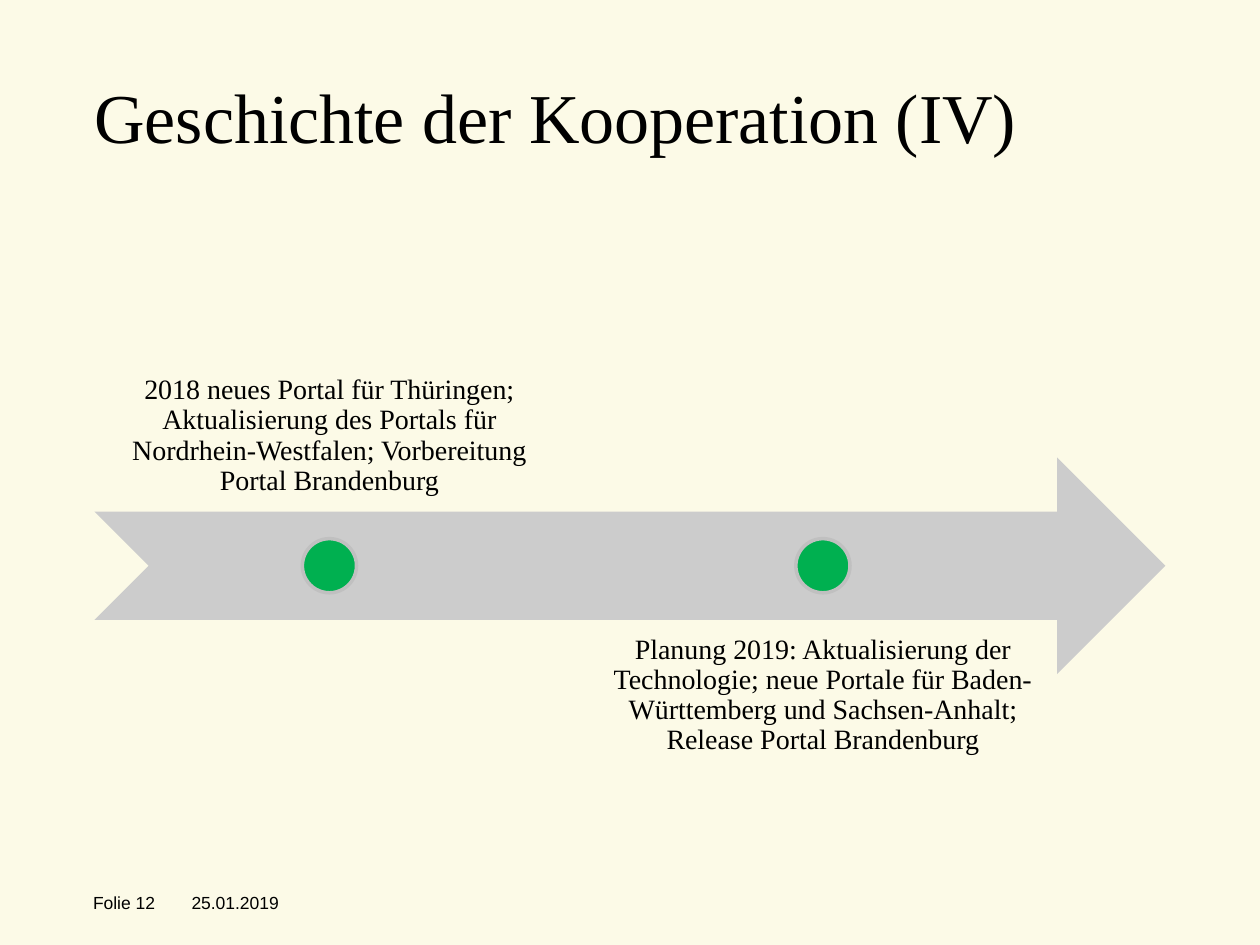
from dataclasses import dataclass
from pptx import Presentation
from pptx.dml.color import RGBColor
from pptx.enum.shapes import MSO_SHAPE as Shape
from pptx.enum.text import MSO_ANCHOR as Anchor, PP_ALIGN as Align
from pptx.util import Inches, Pt

TITLE = "Geschichte der Kooperation (IV)"
MILESTONES = [
    ("2018 neues Portal für Thüringen; Aktualisierung des Portals für "
     "Nordrhein-Westfalen; Vorbereitung Portal Brandenburg"),
    ("Planung 2019: Aktualisierung der Technologie; neue Portale für "
     "Baden-Württemberg und Sachsen-Anhalt; Release Portal Brandenburg"),
]
FOOTER = [
    ("Folie 12", (0.64, 7.03, 0.86, 0.26), (0.1, 0.05), Anchor.MIDDLE),
    ("25.01.2019", (1.52, 7.08, 0.81, 0.17), (0, 0), Anchor.TOP),
]


@dataclass(frozen=True)
class Theme:
    background: str = "FCFAE7"
    text: str = "000000"
    arrow: str = "CCCCCC"
    dot: str = "00B050"
    ring: str = "C0C0C0"
    serif: str = "Times New Roman"
    sans: str = "Arial"
    title_size: int = 40
    label_size: int = 16
    footer_size: int = 10


T = Theme()
WIDTH, HEIGHT = 10, 7.5
MARGIN = 0.075 * WIDTH
CONTENT_W = WIDTH - 2 * MARGIN
BAND_TOP, BAND_H = 3.63, 1.72
LABEL_W = 3.73
PITCH = 1.05 * LABEL_W
DOT = BAND_H / 4


def rgb(value):
    return RGBColor.from_string(value)


def set_all(target, values):
    for name, value in values.items():
        setattr(target, name, value)


def add_text(s, text, box, size, font, inset=(0, 0), anchor=Anchor.TOP, **paragraph):
    tf = s.shapes.add_textbox(*map(Inches, box)).text_frame
    dx, dy = map(Inches, inset)
    set_all(tf, dict(word_wrap=True, vertical_anchor=anchor, margin_left=dx,
                     margin_right=dx, margin_top=dy, margin_bottom=dy))
    p = tf.paragraphs[0]
    set_all(p, paragraph)
    r = p.add_run()
    r.text = text
    set_all(r.font, dict(size=Pt(size), name=font))
    r.font.color.rgb = rgb(T.text)


def add_filled(s, kind, box, fill, ring=None):
    sp = s.shapes.add_shape(kind, *map(Inches, box))
    sp.shadow.inherit = False
    sp.fill.solid()
    sp.fill.fore_color.rgb = rgb(fill)
    if ring:
        sp.line.color.rgb = rgb(ring)
        sp.line.width = Pt(2)
    else:
        sp.line.fill.background()


def add_milestone(s, index, text):
    left = MARGIN + index * PITCH
    above = index % 2 == 0
    top = BAND_TOP + BAND_H * (-0.75 if above else 0.75)
    add_text(s, text, (left, top, LABEL_W, BAND_H), T.label_size, T.serif,
             (0.12, 0.12), Anchor.BOTTOM if above else Anchor.TOP,
             alignment=Align.CENTER, line_spacing=0.9)
    add_filled(s, Shape.OVAL, (left + (LABEL_W - DOT) / 2,
                               BAND_TOP + (BAND_H - DOT) / 2, DOT, DOT),
               T.dot, T.ring)


def main():
    prs = Presentation()
    set_all(prs, dict(slide_width=Inches(WIDTH), slide_height=Inches(HEIGHT)))
    s = prs.slides.add_slide(prs.slide_layouts[6])
    s.background.fill.solid()
    s.background.fill.fore_color.rgb = rgb(T.background)

    add_filled(s, Shape.NOTCHED_RIGHT_ARROW,
               (MARGIN, BAND_TOP, CONTENT_W, BAND_H), T.arrow)
    for index, text in enumerate(MILESTONES):
        add_milestone(s, index, text)
    add_text(s, TITLE, (MARGIN, 0.58, CONTENT_W, 1.33), T.title_size, T.serif)
    for text, box, inset, anchor in FOOTER:
        add_text(s, text, box, T.footer_size, T.sans, inset, anchor)
    prs.save("out.pptx")


if __name__ == "__main__":
    main()
